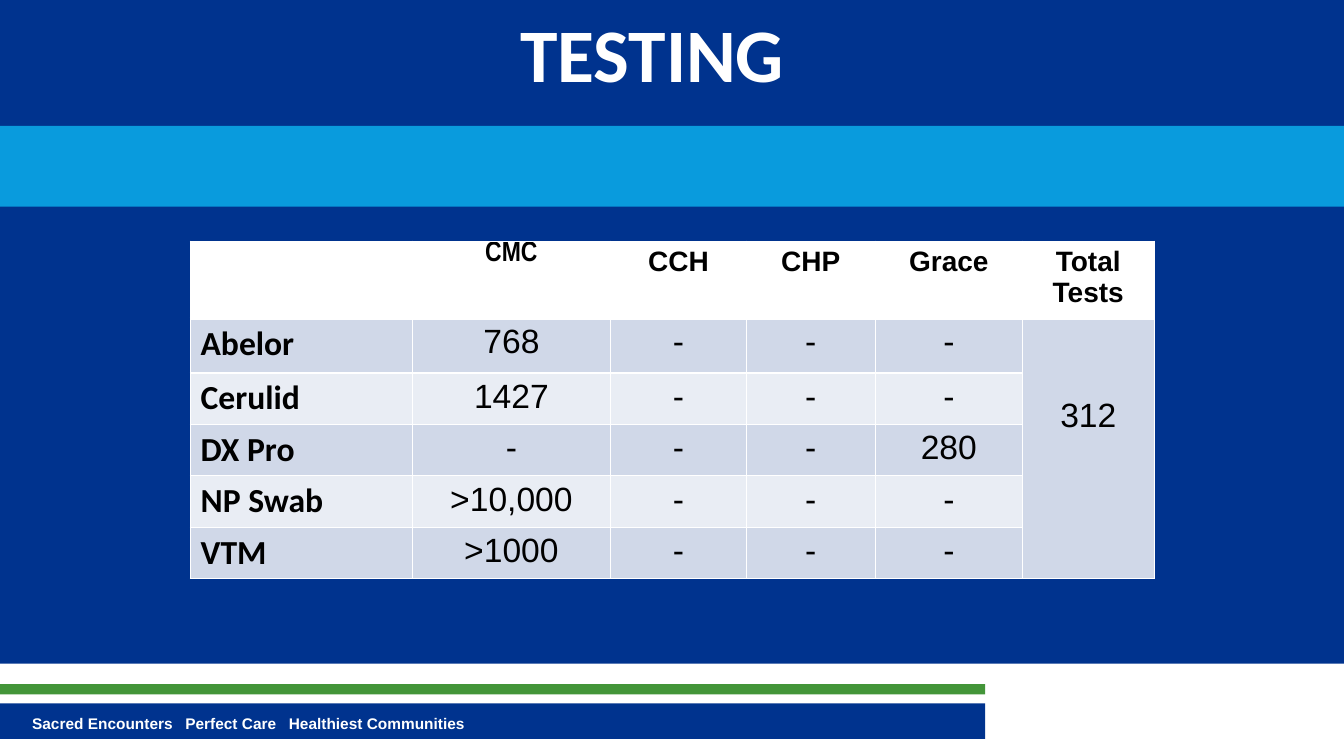
from dataclasses import dataclass

from lxml.etree import SubElement
from pptx import Presentation
from pptx.dml.color import RGBColor
from pptx.enum.shapes import MSO_SHAPE
from pptx.enum.text import PP_ALIGN
from pptx.oxml import parse_xml
from pptx.oxml.ns import nsdecls, qn
from pptx.util import Inches, Pt


@dataclass(frozen=True)
class Theme:
    navy: str = "00338E"
    sky: str = "099BDD"
    green: str = "439539"
    white: str = "FFFFFF"
    black: str = "000000"
    stripes: tuple = ("E9EDF4", "D0D8E8")
    body_font: str = "Arial"
    narrow_font: str = "Arial Narrow"
    label_font: str = "Calibri"
    title_size: int = 54
    data_size: int = 24
    header_size: int = 20
    footer_size: int = 11


class SlideBuilder:
    """Places elements on one slide; all lengths are percentages of its size."""

    def __init__(self, deck, theme):
        self.deck = deck
        self.theme = theme
        self.page = deck.slides.add_slide(deck.slide_layouts[6])

    def across(self, share):
        return round(self.deck.slide_width * share / 100)

    def down(self, share):
        return round(self.deck.slide_height * share / 100)

    def frame(self, left, top, width, height):
        return self.across(left), self.down(top), self.across(width), self.down(height)

    def band(self, left, top, width, height, color):
        bar = self.page.shapes.add_shape(
            MSO_SHAPE.RECTANGLE, *self.frame(left, top, width, height))
        bar.shadow.inherit = False
        bar.fill.solid()
        bar.fill.fore_color.rgb = RGBColor.from_string(color)
        bar.line.fill.background()

    def add_span(self, para, text, size, color, font, bold=True):
        span = para.add_run()
        span.text = text
        span.font.size = Pt(size)
        span.font.name = font
        span.font.bold = bold
        span.font.color.rgb = RGBColor.from_string(color)

    def text(self, left, top, width, height, text, size, font,
             align=PP_ALIGN.LEFT, tabs=()):
        box = self.page.shapes.add_textbox(*self.frame(left, top, width, height))
        box.text_frame.word_wrap = True
        para = box.text_frame.paragraphs[0]
        para.alignment = align
        if tabs:
            stops = SubElement(para._p.get_or_add_pPr(), qn("a:tabLst"))
            for stop in tabs:
                SubElement(stops, qn("a:tab"), pos=str(self.across(stop)), algn="l")
        self.add_span(para, text, size, self.theme.white, font)

    def border(self, cell, bottom_width):
        properties = cell._tc.get_or_add_tcPr()
        widths = {"lnL": 1, "lnR": 1, "lnT": 1, "lnB": bottom_width}
        for position, (side, width) in enumerate(widths.items()):
            properties.insert(position, parse_xml(
                f'<a:{side} {nsdecls("a")} w="{Pt(width)}"><a:solidFill>'
                f'<a:srgbClr val="{self.theme.white}"/></a:solidFill></a:{side}>'))

    def table(self, left, top, columns, rows, values):
        theme = self.theme
        grid = self.page.shapes.add_table(
            len(rows), len(columns),
            *self.frame(left, top, sum(columns), sum(rows))).table
        grid.first_row = grid.horz_banding = False
        for column, share in zip(grid.columns, columns):
            column.width = self.across(share)
        for row, share in zip(grid.rows, rows):
            row.height = self.down(share)
        for r, line in enumerate(values):
            for c, value in enumerate(line):
                cell = grid.cell(r, c)
                header, label = r == 0, c == 0
                cell.fill.solid()
                cell.fill.fore_color.rgb = RGBColor.from_string(
                    theme.white if header else theme.stripes[r % 2])
                self.border(cell, 3 if header else 1)
                if value:
                    para = cell.text_frame.paragraphs[0]
                    para.alignment = PP_ALIGN.LEFT if label else PP_ALIGN.CENTER
                    self.add_span(
                        para, value,
                        theme.header_size if header else theme.data_size,
                        theme.black,
                        theme.label_font if label else
                        theme.narrow_font if value == "CMC" else theme.body_font,
                        header or label)
        return grid


def main():
    deck = Presentation()
    deck.slide_width, deck.slide_height = Inches(13.33), Inches(7.5)
    theme = Theme()
    slide = SlideBuilder(deck, theme)

    slide.band(0, 0, 100, 87.8, theme.navy)
    slide.band(0, 93.05, 73.3, 4.7, theme.navy)
    slide.text(1.65, 93.75, 62.5, 3.85,
               "Sacred Encounters\tPerfect Care\tHealthiest Communities",
               theme.footer_size, theme.body_font, tabs=(11.4, 19.1))
    slide.band(0, 90.5, 73.3, 1.35, theme.green)
    slide.text(8.4, 0.3, 80.25, 22, "TESTING", theme.title_size,
               theme.label_font, PP_ALIGN.CENTER)
    slide.band(0, 16.65, 100, 10.7, theme.sky)

    tests = slide.table(
        14.18, 31.9,
        columns=(16.5, 14.75, 10.1, 9.6, 10.95, 9.8),
        rows=(9.9, 7.2) + (6.8,) * 4,
        values=(
            ("", "CMC", "CCH", "CHP", "Grace", "Total Tests"),
            ("Abelor", "768", "-", "-", "-", "312"),
            ("Cerulid", "1427", "-", "-", "-", ""),
            ("DX Pro", "-", "-", "-", "280", ""),
            ("NP Swab", ">10,000", "-", "-", "-", ""),
            ("VTM", ">1000", "-", "-", "-", ""),
        ))
    tests.cell(0, 1).margin_top = 0
    total = tests.cell(1, 5)
    total.merge(tests.cell(5, 5))
    total.margin_top = slide.down(10.4)

    deck.save("out.pptx")


if __name__ == "__main__":
    main()
